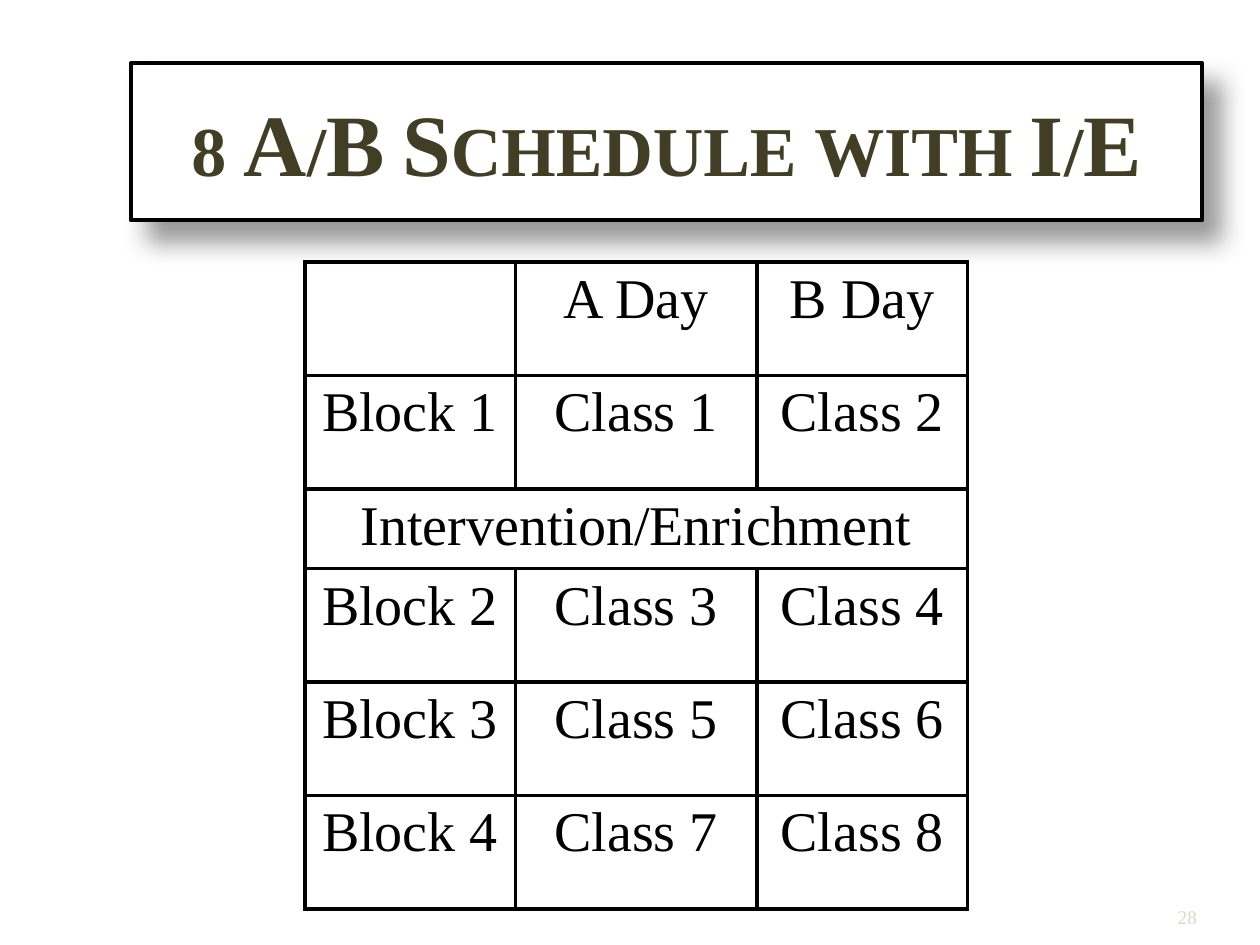
from lxml.etree import SubElement
from pptx import Presentation
from pptx.dml.color import RGBColor
from pptx.enum.text import MSO_ANCHOR, PP_ALIGN
from pptx.oxml.ns import qn
from pptx.util import Inches, Pt

BLACK = RGBColor(0x00, 0x00, 0x00)
WHITE = RGBColor(0xFF, 0xFF, 0xFF)
OLIVE = RGBColor(0x42, 0x3E, 0x26)
SAND = RGBColor(0xDD, 0xD9, 0xC3)

COLUMN_WIDTHS = [1.67, 1.92, 1.67]
ROW_HEIGHT = 0.9
SPAN_HEIGHT = 0.45
SCHEDULE = [
    ["", "A Day", "B Day"],
    ["Block 1", "Class 1", "Class 2"],
    ["Intervention/Enrichment"],
    ["Block 2", "Class 3", "Class 4"],
    ["Block 3", "Class 5", "Class 6"],
    ["Block 4", "Class 7", "Class 8"],
]


class ScheduleSlide:
    font_name = "Times New Roman"
    line_width = Pt(2.25)

    def __init__(self, presentation):
        self.slide = presentation.slides.add_slide(presentation.slide_layouts[5])

    def format_paragraph(self, paragraph, size, color, align, bold=False):
        paragraph.alignment = align
        font = paragraph.font
        font.name = self.font_name
        font.size = Pt(size)
        font.bold = bold
        font.color.rgb = color

    def add_color(self, parent, color, opacity=100):
        tint = SubElement(parent, qn("a:srgbClr"), val=str(color))
        if opacity < 100:
            SubElement(tint, qn("a:alpha"), val=str(opacity * 1000))

    def add_shadow(self, shape, color, opacity, blur, distance, angle):
        shape.shadow.inherit = False
        effects = shape._element.spPr.find(qn("a:effectLst"))
        shadow = SubElement(
            effects, qn("a:outerShdw"), blurRad=str(Pt(blur)),
            dist=str(Pt(distance)), dir=str(angle * 60000),
            algn="tl", rotWithShape="0")
        self.add_color(shadow, color, opacity)

    def add_title(self, text, left, top, width, height):
        title = self.slide.shapes.title
        title.left, title.top = Inches(left), Inches(top)
        title.width, title.height = Inches(width), Inches(height)
        title.fill.solid()
        title.fill.fore_color.rgb = WHITE
        title.line.color.rgb = BLACK
        title.line.width = self.line_width
        self.add_shadow(title, BLACK, opacity=40, blur=14, distance=14, angle=50)
        frame = title.text_frame
        frame.text = text
        frame.word_wrap = True
        frame.vertical_anchor = MSO_ANCHOR.MIDDLE
        heading = frame.paragraphs[0]
        self.format_paragraph(heading, 50, OLIVE, PP_ALIGN.CENTER, bold=True)
        heading.runs[0].font._element.set("cap", "small")

    def add_borders(self, cell):
        properties = cell._tc.get_or_add_tcPr()
        for position, side in enumerate(("a:lnL", "a:lnR", "a:lnT", "a:lnB")):
            border = properties.makeelement(qn(side), {"w": str(self.line_width)})
            properties.insert(position, border)
            self.add_color(SubElement(border, qn("a:solidFill")), BLACK)

    def add_schedule(self, rows, left, top):
        heights = [ROW_HEIGHT if len(row) > 1 else SPAN_HEIGHT for row in rows]
        schedule = self.slide.shapes.add_table(
            len(rows), len(COLUMN_WIDTHS), Inches(left), Inches(top),
            Inches(sum(COLUMN_WIDTHS)), Inches(sum(heights))).table
        schedule.first_row = False
        schedule.horz_banding = False
        for column, width in zip(schedule.columns, COLUMN_WIDTHS):
            column.width = Inches(width)
        for index, (labels, height) in enumerate(zip(rows, heights)):
            schedule.rows[index].height = Inches(height)
            if len(labels) == 1:
                schedule.cell(index, 0).merge(
                    schedule.cell(index, len(COLUMN_WIDTHS) - 1))
            for position, label in enumerate(labels):
                cell = schedule.cell(index, position)
                cell.text = label
                self.format_paragraph(
                    cell.text_frame.paragraphs[0], 32, BLACK, PP_ALIGN.CENTER)
            for cell in schedule.rows[index].cells:
                cell.fill.background()
                self.add_borders(cell)

    def add_page_number(self, number, left, top, width, height):
        page_number = self.slide.shapes.add_textbox(
            Inches(left), Inches(top), Inches(width), Inches(height))
        frame = page_number.text_frame
        frame.text = number
        frame.word_wrap = True
        frame.margin_right = 0
        frame.vertical_anchor = MSO_ANCHOR.MIDDLE
        self.format_paragraph(frame.paragraphs[0], 11, SAND, PP_ALIGN.RIGHT)


def main():
    presentation = Presentation()
    presentation.slide_width = Inches(10)
    presentation.slide_height = Inches(7.5)
    page = ScheduleSlide(presentation)
    page.add_page_number("28", 8.83, 7.15, 0.67, 0.25)
    page.add_title("8 A/B Schedule with I/E", 1.04, 0.5, 8.5, 1.25)
    page.add_schedule(SCHEDULE, 2.42, 2.08)
    presentation.save("out.pptx")


if __name__ == "__main__":
    main()
